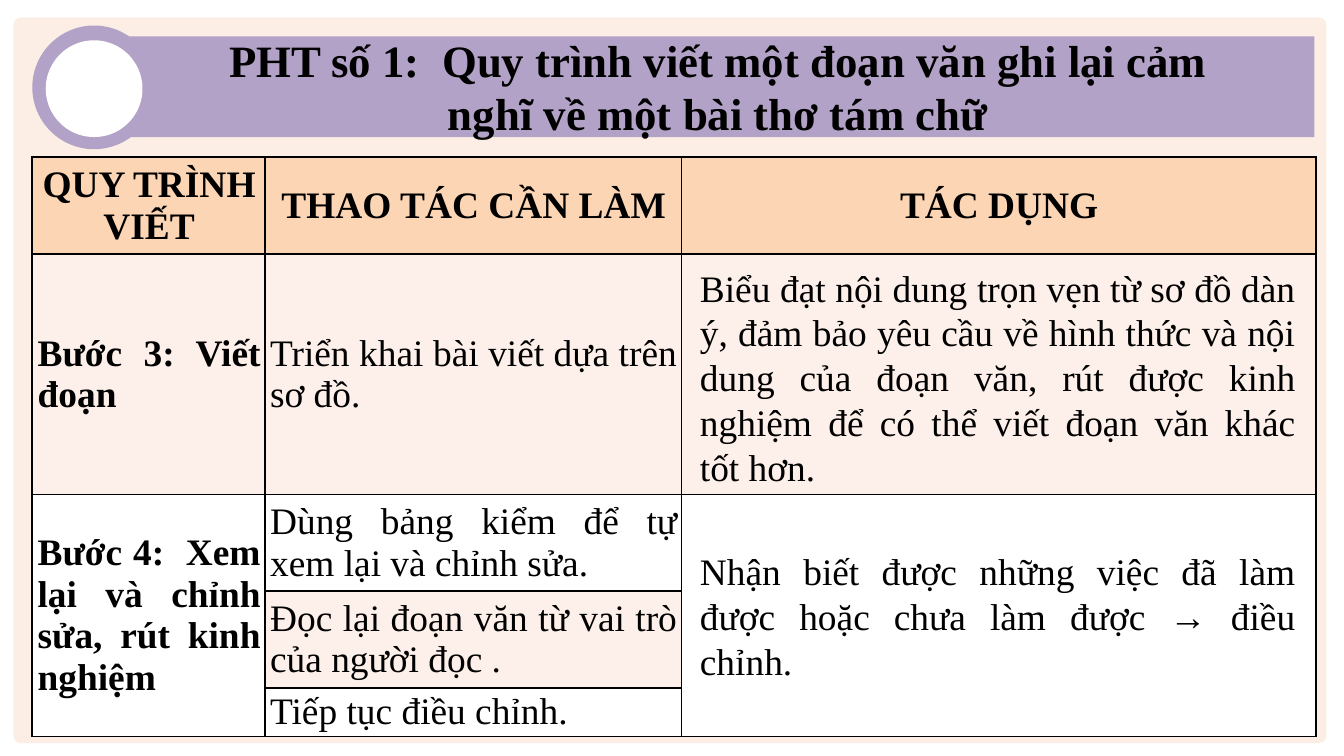
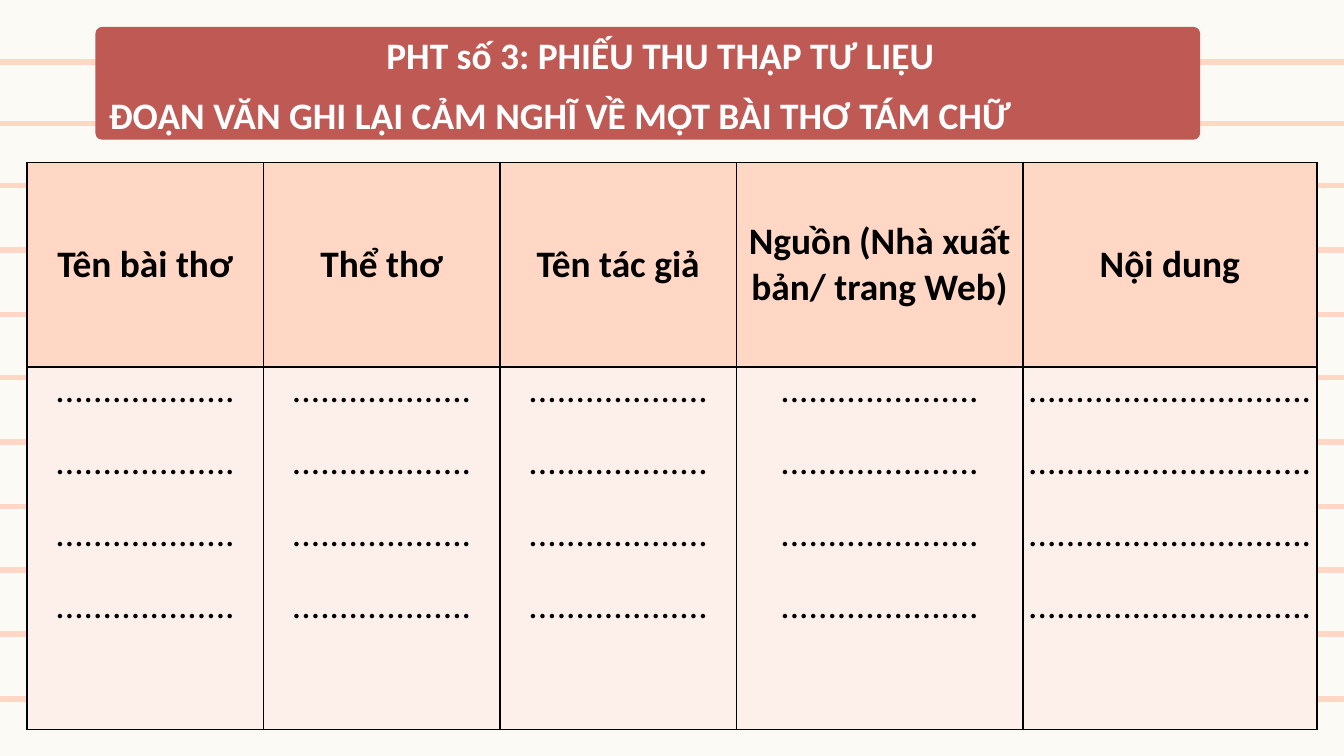
from lxml.etree import SubElement
from pptx import Presentation
from pptx.dml.color import RGBColor
from pptx.enum.shapes import MSO_CONNECTOR as Connector, MSO_SHAPE as Shape
from pptx.enum.text import MSO_ANCHOR as Anchor, MSO_AUTO_SIZE as AutoSize, PP_ALIGN as Align
from pptx.oxml.ns import qn
from pptx.util import Pt

PX = 9144  # 100 px to the inch
TITLE_ONLY = 5
COLORS = {
    "ink": "000000", "white": "FFFFFF", "frame": "E46C0A", "violet": "B3A2C7",
    "peach": "FCD5B5", "blush": "FDEFE9", "cream": "FBFAF5", "coral": "FFD7C4",
    "brick": "BF5954",
}
SERIF = {"name": "Times New Roman", "size": Pt(20), "bold": False}
SANS = {"name": "Calibri", "size": Pt(20), "bold": False}
BOLD = {"bold": True}
CENTERED = {"alignment": Align.CENTER, "space_after": Pt(8)}
JUSTIFIED = {"alignment": Align.JUSTIFY, "space_after": Pt(8)}
SPACED = {"space_before": Pt(6)}


def px(*lengths):
    return [length * PX for length in lengths]


def rgb(name):
    return RGBColor.from_string(COLORS[name])


def apply(target, values):
    for name, value in values.items():
        setattr(target, name, value)


def write(frame, lines, font, layout, color="ink"):
    """Write one paragraph per line; a line is a string or a list of (text, size) spans."""
    for index, line in enumerate(lines):
        para = frame.paragraphs[0] if index == 0 else frame.add_paragraph()
        apply(para, layout)
        if index == 0:
            para.space_before = Pt(0)
        for text, size in [(line, font["size"])] if isinstance(line, str) else line:
            span = para.add_run()
            span.text = text
            apply(span.font, {**font, "size": size})
            span.font.color.rgb = rgb(color)


def add_plain(page, kind, box, color, corner=None):
    shape = page.shapes.add_shape(kind, *px(*box))
    shape.shadow.inherit = False
    shape.fill.solid()
    shape.fill.fore_color.rgb = rgb(color)
    shape.line.fill.background()
    if corner is not None:
        shape.adjustments[0] = corner
    return shape


def add_page(deck, color):
    page = deck.slides.add_slide(deck.slide_layouts[TITLE_ONLY])
    page.background.fill.solid()
    page.background.fill.fore_color.rgb = rgb(color)
    return page


def place_title(page, box, lines, font, layout, color="ink"):
    title = page.shapes.title
    apply(title, dict(zip(("left", "top", "width", "height"), px(*box))))
    apply(title.text_frame, {"word_wrap": True, "auto_size": AutoSize.NONE,
                             "vertical_anchor": Anchor.TOP})
    write(title.text_frame, lines, font, layout, color)
    title.element.getparent().append(title.element)  # bring above its band
    return title


def add_note(page, box, text, layout):
    note = page.shapes.add_textbox(*px(*box))
    note.text_frame.word_wrap = True
    write(note.text_frame, [text], SERIF, layout)


def add_grid(page, left, top, columns, rows):
    """Add a bare table with the given column widths and row heights."""
    frame = page.shapes.add_table(len(rows), len(columns),
                                  *px(left, top, sum(columns), sum(rows)))
    table = frame.table
    apply(table, {"first_row": False, "horz_banding": False})
    for column, width in zip(table.columns, columns):
        column.width = width * PX
    for row, height in zip(table.rows, rows):
        row.height = height * PX
    return table


def style_cell(cell, fill, insets, anchor):
    properties = cell._tc.get_or_add_tcPr()
    for side in ("lnL", "lnR", "lnT", "lnB"):
        border = SubElement(properties, qn(f"a:{side}"), w=str(Pt(1)))
        paint = SubElement(border, qn("a:solidFill"))
        SubElement(paint, qn("a:srgbClr"), val=COLORS["ink"])
    cell.fill.solid()
    cell.fill.fore_color.rgb = rgb(fill)
    left, right = px(*insets)
    apply(cell, {"margin_left": left, "margin_right": right,
                 "margin_top": 0, "margin_bottom": 0, "vertical_anchor": anchor})


def add_steps_header(page, left, top):
    add_plain(page, Shape.RECTANGLE, (left + 69, top + 8, 885, 75), "violet")
    place_title(page, (left + 103, top, 814, 91),
                ["PHT số 1:  Quy trình viết một đoạn văn ghi lại cảm nghĩ về một bài thơ tám chữ"],
                {**SERIF, **BOLD, "size": Pt(24)}, CENTERED)
    add_plain(page, Shape.OVAL, (left, top, 92, 92), "violet")
    add_plain(page, Shape.OVAL, (left + 10, top + 11, 72, 72), "white")


def add_steps_table(page, left, top):
    table = add_grid(page, left, top, (173, 310, 472), (72, 179, 72, 72, 36))
    texts = [
        ("QUY TRÌNH VIẾT", "THAO TÁC CẦN LÀM", "TÁC DỤNG"),
        ("Bước 3: Viết đoạn", "Triển khai bài viết dựa trên sơ đồ.", ""),
        ("Bước 4:  Xem lại và chỉnh sửa, rút kinh nghiệm",
         "Dùng bảng kiểm để tự xem lại và chỉnh sửa.", ""),
        ("", "Đọc lại đoạn văn từ vai trò của người đọc .", ""),
        ("", "Tiếp tục điều chỉnh.", ""),
    ]
    fills = ("peach", "blush", "white", "blush", "white")
    for row, (line, fill) in enumerate(zip(texts, fills)):
        for column, text in enumerate(line):
            cell = table.cell(row, column)
            style_cell(cell, fill, (4, 3), Anchor.MIDDLE)
            if text:
                write(cell.text_frame, [text], {**SERIF, "bold": row == 0 or column == 0},
                      CENTERED if row == 0 else JUSTIFIED)
    for column in (0, 2):
        table.cell(2, column).merge(table.cell(4, column))
    add_note(page, (left + 487, top + 75, 463, 178),
             "Biểu đạt nội dung trọn vẹn từ sơ đồ dàn ý, đảm bảo yêu cầu về hình thức và nội "
             "dung của đoạn văn, rút được kinh nghiệm để có thể viết đoạn văn khác tốt hơn.",
             {"alignment": Align.JUSTIFY})
    add_note(page, (left + 487, top + 286, 463, 111),
             "Nhận biết được những việc đã làm được hoặc chưa làm được → điều chỉnh.",
             JUSTIFIED)


def build_steps_page(deck):
    page = add_page(deck, "white")
    frame = add_plain(page, Shape.ROUNDED_RECTANGLE, (10, 13, 977, 540), "frame", 0.01)
    tint = frame.element.spPr.find(qn("a:solidFill"))[0]
    SubElement(tint, qn("a:alpha"), val="11000")
    add_steps_header(page, 24, 19)
    add_steps_table(page, 24, 117)


def add_ruled_lines(page):
    heights = [46, 92] + [138 + round(47.75 * step) for step in range(9)]
    for y in heights:
        rule = page.shapes.add_connector(Connector.STRAIGHT, *px(-18, y, 1018, y))
        rule.line.color.rgb = rgb("coral")
        rule.line.width = Pt(3)
        SubElement(rule.element.spPr, qn("a:effectLst"))


def add_sources_header(page, left, top):
    add_plain(page, Shape.ROUNDED_RECTANGLE, (left, top, 822, 84), "brick", 0.06)
    title = place_title(page, (left, top - 1, 841, 89),
                        ["PHT số 3: PHIẾU THU THẬP TƯ LIỆU",
                         "ĐOẠN VĂN GHI LẠI CẢM NGHĨ VỀ MỘT BÀI THƠ TÁM CHỮ"],
                        {**SANS, **BOLD}, CENTERED, "white")
    apply(title.text_frame.paragraphs[1], {"alignment": Align.LEFT, "space_after": Pt(0)})


def add_sources_table(page, left, top):
    table = add_grid(page, left, top, (176, 176, 176, 213, 219), (152, 270))
    source = [("Nguồn", Pt(20)), (" ", Pt(18)), ("(Nhà xuất bản/ trang Web)", Pt(20))]
    heads = ("Tên bài thơ", "Thể thơ", "Tên tác giả", source, "Nội dung")
    dots = (19, 19, 19, 21, 30)
    layout = {**CENTERED, **SPACED}
    for column, (text, count) in enumerate(zip(heads, dots)):
        head, blank = table.cell(0, column), table.cell(1, column)
        style_cell(head, "coral", (2, 2), Anchor.MIDDLE)
        write(head.text_frame, [text], {**SANS, **BOLD}, layout)
        style_cell(blank, "blush", (2, 2), Anchor.TOP)
        write(blank.text_frame, ["." * count] * 4, SANS, layout)


def build_sources_page(deck):
    page = add_page(deck, "cream")
    add_ruled_lines(page)
    add_sources_header(page, 71, 20)
    add_sources_table(page, 20, 121)


def main():
    deck = Presentation()
    deck.slide_width, deck.slide_height = Pt(720), Pt(405)
    build_steps_page(deck)
    build_sources_page(deck)
    deck.save("out.pptx")


if __name__ == "__main__":
    main()
